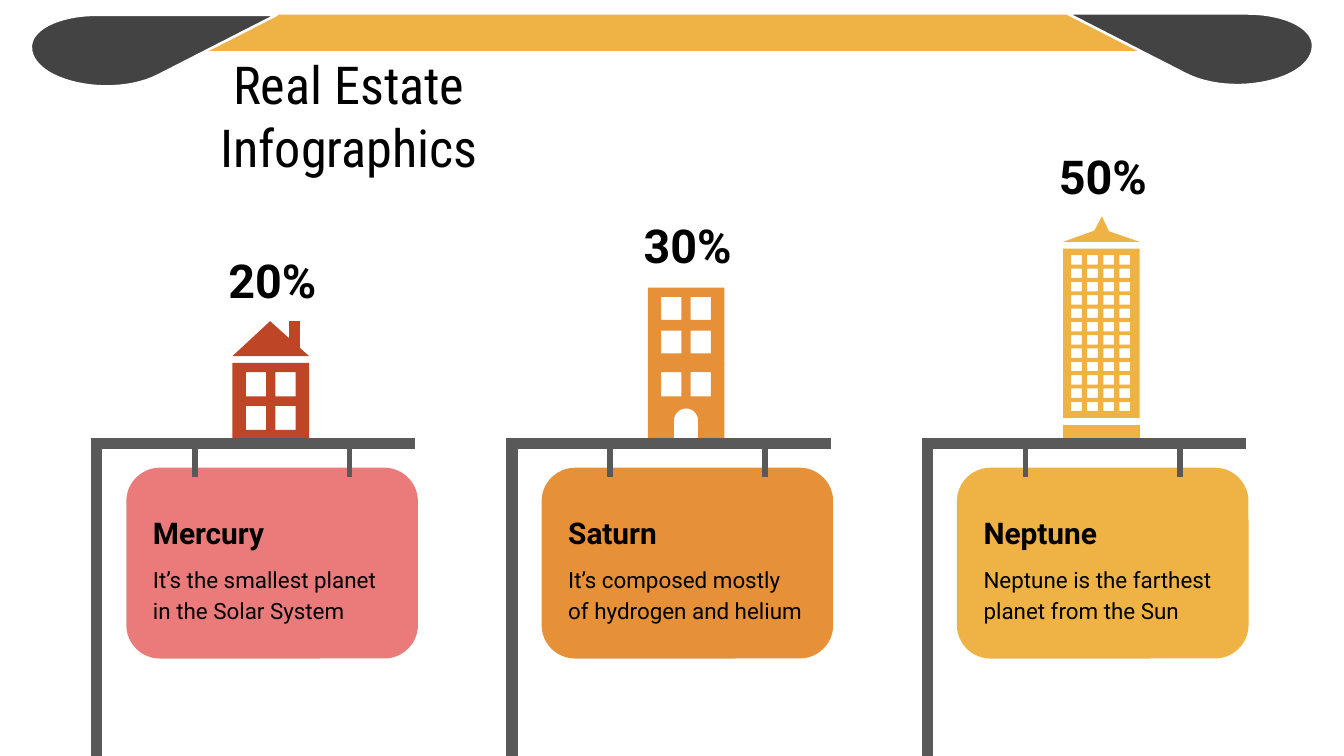
"""Build the real estate infographic slide with three signs and buildings."""
import math

import lxml.etree
import pptx
import pptx.dml.color
import pptx.enum.shapes
import pptx.enum.text
import pptx.oxml.ns
import pptx.util

Inches = pptx.util.Inches
SHAPES = pptx.enum.shapes.MSO_SHAPE
ALIGN = pptx.enum.text.PP_ALIGN
ANCHOR = pptx.enum.text.MSO_ANCHOR

DARK, GREY, WHITE, BLACK = "434343", "595959", "FFFFFF", "000000"
PINK, RED, ORANGE, YELLOW = "EB7B7B", "BE4626", "E69138", "EEB245"
PITCH = 3.09
WALL = 0.57


def color(value):
    """Return the RGB colour for a hex string."""
    return pptx.dml.color.RGBColor.from_string(value)


def paint(sp, fill, line=None, width=1.38):
    """Give a shape a flat fill and an optional outline."""
    sp.shadow.inherit = False
    sp.fill.solid()
    sp.fill.fore_color.rgb = color(fill)
    if line:
        sp.line.color.rgb = color(line)
        sp.line.width = pptx.util.Pt(width)
    else:
        sp.line.fill.background()


def add_block(s, kind, x, y, w, h, fill):
    """Add a filled preset shape."""
    sp = s.shapes.add_shape(kind, Inches(x), Inches(y), Inches(w), Inches(h))
    paint(sp, fill)
    return sp


def add_outline(s, contours, fill, left=0, line=None):
    """Add one freeform made of closed contours, shifted right by left."""
    builder = None
    for contour in contours:
        points = [(Inches(left + x), Inches(y)) for x, y in contour]
        if builder is None:
            builder = s.shapes.build_freeform(*points[0])
        else:
            builder.move_to(*points[0])
        builder.add_line_segments(points[1:], close=True)
    paint(builder.convert_to_shape(), fill, line)


def add_line(s, x1, y1, x2, y2, width):
    """Add a straight grey bar of the sign post."""
    line = s.shapes.add_connector(
        pptx.enum.shapes.MSO_CONNECTOR.STRAIGHT,
        Inches(x1), Inches(y1), Inches(x2), Inches(y2))
    line.line.color.rgb = color(GREY)
    line.line.width = pptx.util.Pt(width)
    lxml.etree.SubElement(line._element.spPr, pptx.oxml.ns.qn("a:effectLst"))


def write(tf, text, size, font="Roboto", bold=False, align=ALIGN.LEFT,
          anchor=ANCHOR.TOP, spacing=1.0):
    """Write one paragraph into a text frame."""
    tf.word_wrap = True
    tf.auto_size = pptx.enum.text.MSO_AUTO_SIZE.NONE
    tf.vertical_anchor = anchor
    tf.margin_left = tf.margin_right = Inches(0.1)
    tf.margin_top = tf.margin_bottom = Inches(0.1)
    p = tf.paragraphs[0]
    p.alignment = align
    p.line_spacing = spacing
    r = p.add_run()
    r.text = text
    r.font.size = pptx.util.Pt(size)
    r.font.name = font
    r.font.bold = bold
    r.font.color.rgb = color(BLACK)


def add_text(s, x, y, w, h, text, size, **style):
    """Add a text box holding one paragraph."""
    sp = s.shapes.add_textbox(Inches(x), Inches(y), Inches(w), Inches(h))
    write(sp.text_frame, text, size, **style)


def rect(x, y, w, h):
    """Return the corners of a rectangle."""
    return [(x, y), (x + w, y), (x + w, y + h), (x, y + h)]


def windows(xs, ys, w, h):
    """Return a grid of window contours."""
    return [rect(x, y, w, h) for y in ys for x in xs]


def curve(a, b, c, d, steps=24):
    """Return points along a cubic curve, without its start."""
    points = []
    for i in range(1, steps + 1):
        t = i / steps
        u = 1 - t
        points.append(tuple(
            u**3 * a[k] + 3 * u * u * t * b[k] + 3 * u * t * t * c[k] + t**3 * d[k]
            for k in (0, 1)))
    return points


def add_header(s):
    """Add the yellow band with a dark swoosh on each end."""
    add_block(s, SHAPES.RECTANGLE, 0.92, 0.11, 8.3, 0.27, YELLOW)
    tip, top, low = (0.23, 0.35), (0.72, 0.11), (1.18, 0.56)
    swoosh = [tip]
    swoosh += curve(tip, (0.23, 0.21), (0.45, 0.11), top)
    swoosh += [(2.06, 0.11), low]
    swoosh += curve(low, (0.83, 0.74), (0.23, 0.61), tip)
    mirrored = [(10 - x, y - 0.01) for x, y in swoosh]
    for contour in (swoosh, mirrored):
        add_outline(s, [contour], DARK, line=WHITE)


def add_house(s, left):
    """Add the small house."""
    add_outline(s, [[(0.28, 2.39), (0, 2.65), (WALL, 2.65)]], RED, left)
    add_outline(s, [rect(0.42, 2.39, 0.08, 0.21)], RED, left)
    panes = windows((0.1, 0.32), (2.77, 3.02), 0.15, 0.18)
    add_outline(s, panes + [rect(0, 2.7, WALL, 0.56)], RED, left)


def add_apartments(s, left):
    """Add the three-storey block with an arched door."""
    panes = windows((0.1, 0.32), (2.21, 2.46), 0.15, 0.17)
    add_outline(s, panes + [rect(0, 2.14, WALL, 0.57)], ORANGE, left)
    radius, middle = 0.09, WALL / 2
    arch = [(middle - radius * math.cos(math.pi * i / 16),
             3.13 - radius * math.sin(math.pi * i / 16)) for i in range(17)]
    ground = [(0, 2.7), (0, 3.26), (middle - radius, 3.26), *arch,
              (middle + radius, 3.26), (WALL, 3.26), (WALL, 2.7)]
    panes = windows((0.1, 0.32), (2.77,), 0.15, 0.18)
    add_outline(s, panes + [ground], ORANGE, left)


def add_tower(s, left):
    """Add the tower with its grid of windows."""
    add_outline(s, [[(0.28, 1.7), (0, 1.8), (WALL, 1.8)]], YELLOW, left)
    add_outline(s, [rect(0, 3.16, WALL, 0.1)], YELLOW, left)
    panes = windows([0.06 + 0.12 * i for i in range(4)],
                    [1.9 + 1.09 / 11 * i for i in range(12)], 0.08, 0.07)
    add_outline(s, panes + [rect(0, 1.85, WALL, 1.26)], YELLOW, left)
    add_outline(s, [[(0.29, 1.61), (0.22, 1.74), (0.35, 1.74)]], YELLOW, left)


def add_sign(s, x, fill, name, text):
    """Add a hanging panel with its texts and the post that carries it."""
    panel = add_block(s, SHAPES.ROUNDED_RECTANGLE, x + 0.22, 3.48, 2.17, 1.42, fill)
    panel.adjustments[0] = 0.25 / 1.42
    add_text(s, x + 0.32, 3.69, 1.96, 0.52, name, 16, bold=True, spacing=1.15)
    add_text(s, x + 0.32, 4.08, 1.96, 0.62, text, 12, spacing=1.15)
    add_line(s, x, 3.26, x, 6.13, 6)
    add_line(s, x + 0.04, 3.3, x + 2.37, 3.3, 6)
    for hook in (0.73, 1.88):
        add_line(s, x + hook, 3.3, x + hook, 3.55, 3)


def main():
    """Build and save the slide."""
    prs = pptx.Presentation()
    prs.slide_width, prs.slide_height = Inches(10), Inches(10 * 9 / 16)
    s = prs.slides.add_slide(prs.slide_layouts[5])
    title = s.shapes.title
    title.left, title.top = Inches(0.72), Inches(0.59)
    title.width, title.height = Inches(3.75), Inches(0.53)
    write(title.text_frame, "Real Estate Infographics", 28,
          font="Roboto Condensed", align=ALIGN.CENTER, anchor=ANCHOR.MIDDLE)
    add_header(s)
    columns = [
        (add_house, PINK, "Mercury",
         "It’s the smallest planet in the Solar System", "20%", 1.89),
        (add_apartments, ORANGE, "Saturn",
         "It’s composed mostly of hydrogen and helium", "30%", 1.63),
        (add_tower, YELLOW, "Neptune",
         "Neptune is the farthest planet from the Sun", "50%", 1.11),
    ]
    for i, (add_building, fill, name, text, share, top) in enumerate(columns):
        x = 0.72 + PITCH * i
        add_building(s, x + 1.01)
        add_sign(s, x, fill, name, text)
        add_text(s, x + 0.75, top, 1.11, 0.39, share, 25, bold=True,
                 align=ALIGN.CENTER, anchor=ANCHOR.MIDDLE)
    prs.save("out.pptx")


if __name__ == "__main__":
    main()
